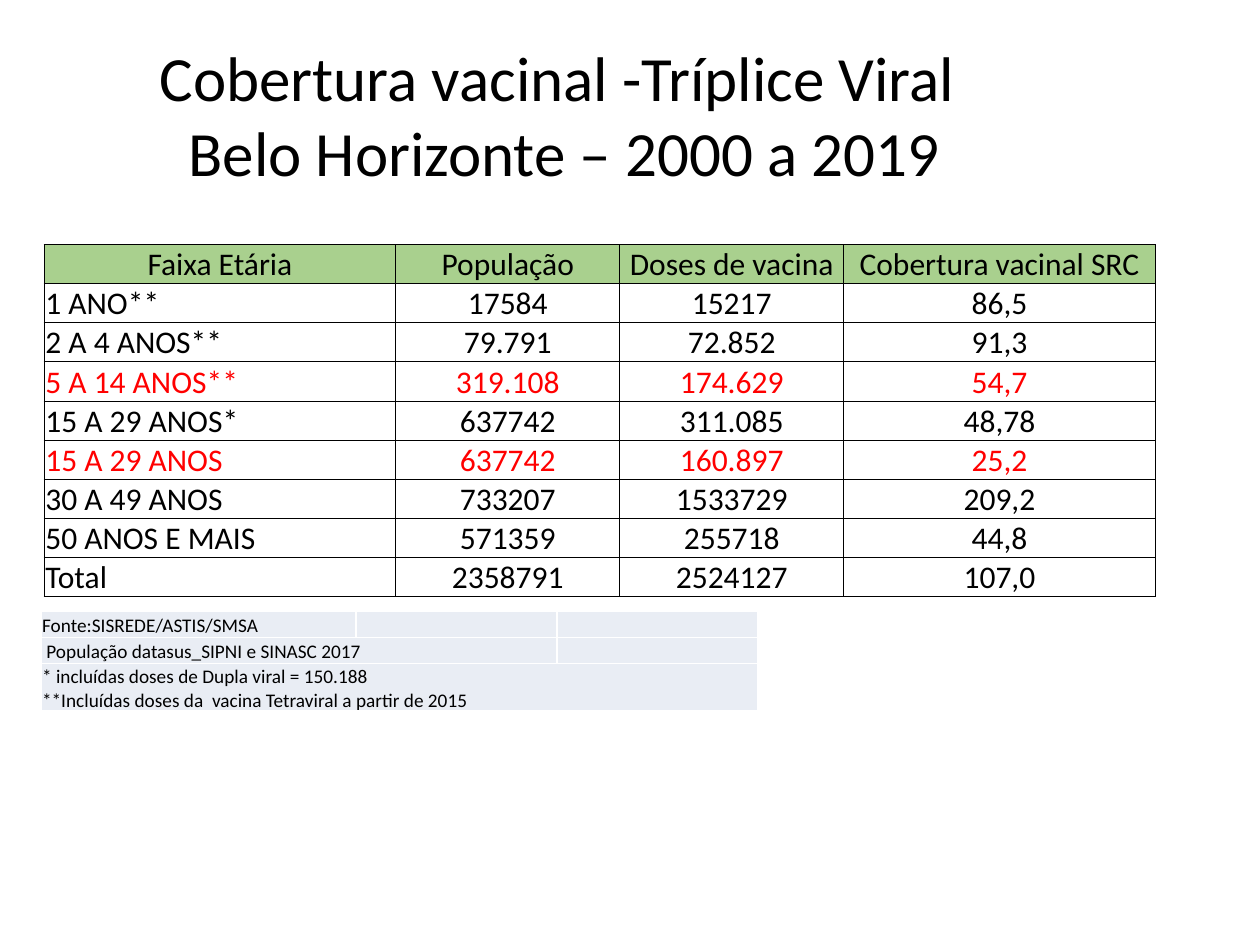
import dataclasses

import lxml.etree
import pptx
import pptx.dml.color
import pptx.enum.text
import pptx.oxml.ns
import pptx.util

Pt = pptx.util.Pt
qn = pptx.oxml.ns.qn
ALIGN = pptx.enum.text.PP_ALIGN
ANCHOR = pptx.enum.text.MSO_ANCHOR


@dataclasses.dataclass(frozen=True)
class Theme:
    font: str = "Calibri"
    black: str = "000000"
    red: str = "FF0000"
    white: str = "FFFFFF"
    green: str = "A9D08E"
    pale: str = "E9EDF4"
    title_size: int = 36
    table_size: int = 18
    note_size: int = 11


THEME = Theme()

HEADINGS = ["Faixa Etária", "População", "Doses de vacina", "Cobertura vacinal SRC"]
COVERAGE = [
    ["1 ANO**", "17584", "15217", "86,5"],
    ["2 A 4 ANOS**", "79.791", "72.852", "91,3"],
    ["5 A 14 ANOS**", "319.108", "174.629", "54,7"],
    ["15 A 29 ANOS*", "637742", "311.085", "48,78"],
    ["15 A 29 ANOS", "637742", "160.897", "25,2"],
    ["30 A 49 ANOS", "733207", "1533729", "209,2"],
    ["50 ANOS E MAIS", "571359", "255718", "44,8"],
    ["Total", "2358791", "2524127", "107,0"],
]
LOW_COVERAGE = {"5 A 14 ANOS**", "15 A 29 ANOS"}
NOTES = [
    ["Fonte:SISREDE/ASTIS/SMSA"],
    [" População datasus_SIPNI e SINASC 2017"],
    ["* incluídas doses de Dupla viral = 150.188",
     "**Incluídas doses da  vacina Tetraviral a partir de 2015"],
]


def rgb(color):
    return pptx.dml.color.RGBColor.from_string(color)


def write_text(frame, lines, size, color=THEME.black, align=ALIGN.LEFT):
    """Write one paragraph per line; a vertical tab breaks a line inside one."""
    for index, line in enumerate(lines):
        para = frame.add_paragraph() if index else frame.paragraphs[0]
        para.text = line
        para.alignment = align
        for span in para.runs:
            span.font.name = THEME.font
            span.font.size = Pt(size)
            span.font.color.rgb = rgb(color)
        if not line:  # keeps an empty cell as low as its row
            lxml.etree.SubElement(para._p, qn("a:endParaRPr"), sz=str(size * 100))


def add_title(page, text, left, top, width, height):
    box = page.shapes.add_textbox(Pt(left), Pt(top), Pt(width), Pt(height))
    box.text_frame.word_wrap = True
    box.text_frame.vertical_anchor = ANCHOR.MIDDLE
    write_text(box.text_frame, [text], THEME.title_size, align=ALIGN.CENTER)


def add_grid(page, left, top, widths, heights):
    """Add a table without the banded style."""
    holder = page.shapes.add_table(len(heights), len(widths), Pt(left), Pt(top),
                                   Pt(sum(widths)), Pt(sum(heights)))
    grid = holder.table
    grid.first_row = grid.horz_banding = False
    for column, width in zip(grid.columns, widths):
        column.width = Pt(width)
    for row, height in zip(grid.rows, heights):
        row.height = Pt(height)
    return grid


def style_cell(cell, fill, border, border_width):
    cell.margin_left = cell.margin_right = cell.margin_top = Pt(0.75)
    cell.margin_bottom = Pt(0)
    cell.vertical_anchor = ANCHOR.BOTTOM
    properties = cell._tc.get_or_add_tcPr()
    for side in ("a:lnL", "a:lnR", "a:lnT", "a:lnB"):
        line = lxml.etree.SubElement(properties, qn(side), w=str(Pt(border_width)))
        solid = lxml.etree.SubElement(line, qn("a:solidFill"))
        lxml.etree.SubElement(solid, qn("a:srgbClr"), val=border)
    cell.fill.solid()
    cell.fill.fore_color.rgb = rgb(fill)


def add_coverage_table(page):
    rows = [HEADINGS] + COVERAGE
    grid = add_grid(page, 25.2, 139.7, [201, 128, 128, 178], [22.3] * len(rows))
    for r, values in enumerate(rows):
        color = THEME.red if values[0] in LOW_COVERAGE else THEME.black
        for c, value in enumerate(values):
            cell = grid.cell(r, c)
            style_cell(cell, THEME.white if r else THEME.green, THEME.black, 0.5)
            align = ALIGN.LEFT if r and c == 0 else ALIGN.CENTER
            write_text(cell.text_frame, [value], THEME.table_size, color, align)


def add_notes_table(page):
    grid = add_grid(page, 23.3, 349.2, [180, 115, 115], [15, 15, 27])
    for r, lines in enumerate(NOTES):
        for c in range(3):
            cell = grid.cell(r, c)
            style_cell(cell, THEME.pale, THEME.white, 1)
            write_text(cell.text_frame, [""] if c else lines, THEME.note_size)
        # Each note spans one column more than the one above
        if r:
            grid.cell(r, 0).merge(grid.cell(r, r))


def main():
    deck = pptx.Presentation()
    deck.slide_width, deck.slide_height = Pt(720), Pt(540)
    page = deck.slides.add_slide(deck.slide_layouts[6])

    # Heading
    add_title(page, "Cobertura vacinal -Tríplice Viral \vBelo Horizonte – 2000 a 2019",
              36, 20, 573, 90)
    # Coverage by age group, then sources and notes
    add_coverage_table(page)
    add_notes_table(page)

    deck.save("out.pptx")


if __name__ == "__main__":
    main()
